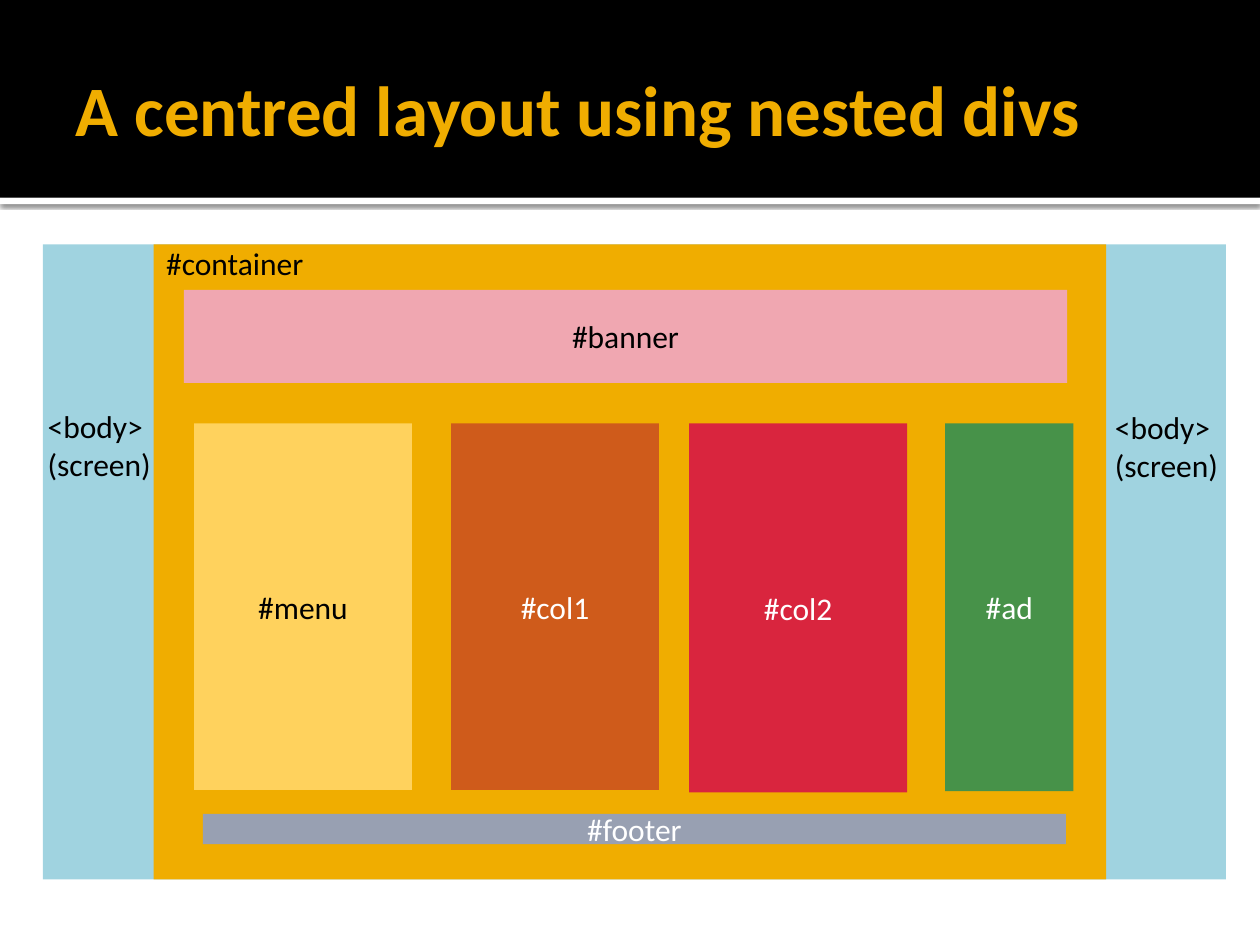
from lxml import etree
from pptx import Presentation
from pptx.dml.color import RGBColor
from pptx.enum.shapes import MSO_SHAPE as Shape
from pptx.enum.text import MSO_ANCHOR as Anchor, MSO_AUTO_SIZE as AutoSize, PP_ALIGN as Align
from pptx.oxml.ns import qn
from pptx.util import Inches, Pt

FONT = "Calibri"
BLACK, WHITE, AMBER = "000000", "FFFFFF", "F0AD00"
WIDTH, HEIGHT = 10, 7.5
HEADER = 1.57
TOP, DEPTH = 1.94, 5.04      # screen and container share these
COLUMN_TOP = 3.36

TITLE = "A centred layout using nested divs"

# Nested divs: text, (left, top, width, height), fill, text colour
DIVS = [
    ("", (0.34, TOP, 9.39, DEPTH), "A0D3E0", BLACK),
    ("", (1.22, TOP, 7.56, DEPTH), AMBER, BLACK),
    ("#banner", (1.46, 2.3, 7.01, 0.74), "F0A7B1", BLACK),
    ("#footer", (1.61, 6.46, 6.85, 0.24), "98A0B2", WHITE),
]

# Columns inside the container: text, left, width, height, fill, text colour
COLUMNS = [
    ("#menu", 1.54, 1.73, 2.91, "FFD25D", BLACK),
    ("#col1", 3.58, 1.65, 2.91, "CF5B1B", WHITE),
    ("#col2", 5.47, 1.73, 2.93, "D9253E", WHITE),
    ("#ad", 7.5, 1.02, 2.92, "479249", WHITE),
]

# Free labels: text, (left, top, width, height)
LABELS = [
    ("<body>\n(screen)", (0.28, 3.18, 1.03, 0.71)),
    ("<body>\n(screen)", (8.75, 3.19, 1.03, 0.71)),
    ("#container", (1.22, 1.89, 1.36, 0.4)),
]


def color(value):
    return RGBColor.from_string(value)


def write(shape, text, size, ink, align, bold=False):
    shape.text_frame.text = text
    for para in shape.text_frame.paragraphs:
        para.alignment = align
        for span in para.runs:
            span.font.name = FONT
            span.font.size = Pt(size)
            span.font.bold = bold
            span.font.color.rgb = color(ink)


def add_block(page, area, fill, text="", ink=BLACK):
    box = page.shapes.add_shape(Shape.RECTANGLE, *map(Inches, area))
    box.shadow.inherit = False
    box.fill.solid()
    box.fill.fore_color.rgb = color(fill)
    box.line.fill.background()
    if text:
        box.text_frame.vertical_anchor = Anchor.MIDDLE
        write(box, text, 18, ink, Align.CENTER)
    return box


def add_drop_shadow(shape):
    effects = shape._element.spPr.find(qn("a:effectLst"))
    shadow = etree.SubElement(effects, qn("a:outerShdw"), blurRad=str(Pt(2.5)),
                              dist=str(Pt(0.8)), dir="5400000", rotWithShape="0")
    tint = etree.SubElement(shadow, qn("a:srgbClr"), val=BLACK)
    etree.SubElement(tint, qn("a:alpha"), val="60000")


def add_header(page):
    strip = add_block(page, (0, HEADER, WIDTH, 0.05), WHITE)
    add_drop_shadow(strip)
    add_block(page, (0, 0, WIDTH, HEADER), BLACK)

    title = page.shapes.title
    title.left, title.top, title.width, title.height = map(Inches, (0.5, 0.17, 9, 1.37))
    frame = title.text_frame
    frame.auto_size = AutoSize.NONE
    frame.vertical_anchor = Anchor.MIDDLE
    frame.margin_left = Inches(0.1)
    frame.margin_right = Inches(0.05)
    write(title, TITLE, 40.5, AMBER, Align.LEFT, bold=True)
    page.shapes._spTree.append(title._element)   # bring in front of the band


def add_label(page, text, area):
    label = page.shapes.add_textbox(*map(Inches, area))
    label.text_frame.word_wrap = False
    label.text_frame.auto_size = AutoSize.SHAPE_TO_FIT_TEXT
    write(label, text, 18, BLACK, Align.LEFT)


def main():
    deck = Presentation()
    deck.slide_width, deck.slide_height = Inches(WIDTH), Inches(HEIGHT)
    page = deck.slides.add_slide(deck.slide_layouts[5])

    add_header(page)
    for text, area, fill, ink in DIVS:
        add_block(page, area, fill, text, ink)
    for text, left, width, height, fill, ink in COLUMNS:
        add_block(page, (left, COLUMN_TOP, width, height), fill, text, ink)
    for text, area in LABELS:
        add_label(page, text, area)

    deck.save("out.pptx")


if __name__ == "__main__":
    main()
